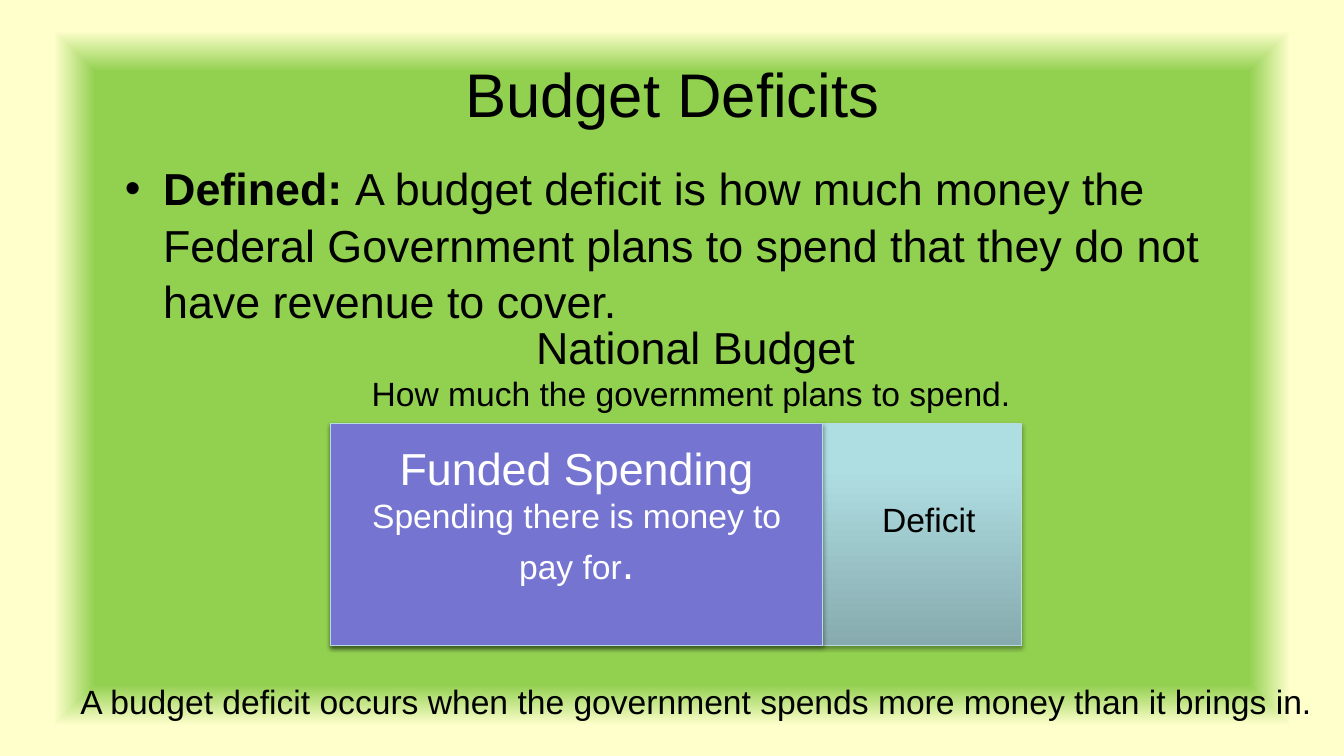
from pptx import Presentation
from pptx.dml.color import RGBColor
from pptx.enum.shapes import MSO_SHAPE
from pptx.enum.text import MSO_ANCHOR, PP_ALIGN
from pptx.oxml import parse_xml
from pptx.oxml.ns import nsdecls, qn
from pptx.util import Inches, Pt

FONT = "Arial"
BLACK = "000000"
WHITE = "FFFFFF"


def color(value):
    return RGBColor.from_string(value)


def style(para, size, ink=BLACK, align=PP_ALIGN.LEFT):
    para.alignment = align
    para.font.name = FONT
    para.font.size = Pt(size)
    para.font.color.rgb = color(ink)


def set_gradient(fill, parent, stops, direction):
    fill.solid()
    stop_xml = "".join(
        f'<a:gs pos="{percent * 1000}"><a:srgbClr val="{value}"/></a:gs>'
        for percent, value in stops
    )
    gradient = parse_xml(
        f'<a:gradFill {nsdecls("a")} rotWithShape="1">'
        f"<a:gsLst>{stop_xml}</a:gsLst>{direction}</a:gradFill>"
    )
    parent.replace(parent.find(qn("a:solidFill")), gradient)


def add_shadow(shape):
    shape.shadow.inherit = False
    effects = shape.element.spPr.find(qn("a:effectLst"))
    effects.append(parse_xml(
        f'<a:outerShdw {nsdecls("a")} blurRad="{Pt(3.1)}" dist="{Pt(1.8)}" '
        'dir="5400000" rotWithShape="0"><a:srgbClr val="000000">'
        '<a:alpha val="35000"/></a:srgbClr></a:outerShdw>'
    ))


def add_bullet(para, indent):
    properties = para._p.get_or_add_pPr()
    properties.set("marL", str(Inches(indent)))
    properties.set("indent", str(Inches(-indent)))
    properties.append(parse_xml(f'<a:buFont {nsdecls("a")} typeface="{FONT}"/>'))
    properties.append(parse_xml(f'<a:buChar {nsdecls("a")} char="•"/>'))


def add_text(page, left, top, width, height, lines, align=PP_ALIGN.LEFT):
    box = page.shapes.add_textbox(
        Inches(left), Inches(top), Inches(width), Inches(height))
    frame = box.text_frame
    frame.word_wrap = False
    for index, (text, size) in enumerate(lines):
        para = frame.add_paragraph() if index else frame.paragraphs[0]
        para.text = text
        style(para, size, align=align)


def add_background(page):
    fill = page.background.fill
    fill.solid()
    set_gradient(
        fill, page.element.find(f".//{qn('p:bgPr')}"),
        [(81, "92D050"), (92, "FFFFCC")],
        '<a:path path="shape"><a:fillToRect l="50000" t="50000" '
        'r="50000" b="50000"/></a:path>',
    )


def add_title(page, left, top, width, height):
    title = page.shapes.title
    title.left, title.top = Inches(left), Inches(top)
    title.width, title.height = Inches(width), Inches(height)
    title.text_frame.text = "Budget Deficits"
    title.text_frame.vertical_anchor = MSO_ANCHOR.MIDDLE
    style(title.text_frame.paragraphs[0], 44, align=PP_ALIGN.CENTER)


def add_definition(page, left, top, width, height):
    box = page.shapes.add_textbox(
        Inches(left), Inches(top), Inches(width), Inches(height))
    box.text_frame.word_wrap = True
    para = box.text_frame.paragraphs[0]
    para.line_spacing = 1.05
    term = para.add_run()
    term.text = "Defined: "
    term.font.bold = True
    para.add_run().text = (
        "A budget deficit is how much money the Federal Government plans "
        "to spend that they do not have revenue to cover."
    )
    style(para, 32)
    add_bullet(para, 0.38)


def add_bar(page, left, top, width, height):
    bar = page.shapes.add_shape(
        MSO_SHAPE.RECTANGLE,
        Inches(left), Inches(top), Inches(width), Inches(height))
    bar.line.color.rgb = color("B6DCDF")
    bar.line.width = Pt(0.75)
    add_shadow(bar)
    return bar


def add_budget(page, left, top, width, height):
    total = add_bar(page, left, top, width, height)
    set_gradient(
        total.fill, total.element.spPr,
        [(0, "87ABAE"), (80, "AFDEE2"), (100, "AFE0E4")],
        '<a:lin ang="16200000" scaled="0"/>',
    )
    funded = add_bar(page, left, top, 4.88, height)
    funded.fill.solid()
    funded.fill.fore_color.rgb = color("7575D1")
    frame = funded.text_frame
    frame.word_wrap = True
    frame.vertical_anchor = MSO_ANCHOR.MIDDLE
    frame.margin_bottom = Inches(0.43)
    heading = frame.paragraphs[0]
    heading.text = "Funded Spending"
    style(heading, 32, WHITE, PP_ALIGN.CENTER)
    detail = frame.add_paragraph()
    detail.add_run().text = "Spending there is money to pay for"
    stop = detail.add_run()
    stop.text = "."
    stop.font.size = Pt(32)
    style(detail, 24, WHITE, PP_ALIGN.CENTER)

    add_text(page, left + 0.27, top - 1.08, 6.7, 1.04, [
        ("National Budget", 32),
        ("How much the government plans to spend. ", 24),
    ], PP_ALIGN.CENTER)
    add_text(page, left + 5.37, top + 0.7, 1.14, 0.5, [("Deficit", 24)])


def main():
    deck = Presentation()
    deck.slide_width, deck.slide_height = Inches(13.33), Inches(7.5)
    page = deck.slides.add_slide(deck.slide_layouts[5])
    add_background(page)
    add_title(page, 0.67, 0.3, 12, 1.25)
    add_definition(page, 1.14, 1.52, 11.06, 1.7)
    add_budget(page, 3.28, 4.2, 6.85, 2.2)
    add_text(page, 0.7, 6.71, 12.63, 0.5, [(
        "A budget deficit occurs when the government spends more money "
        "than it brings in.", 24)])
    deck.save("out.pptx")


if __name__ == "__main__":
    main()
